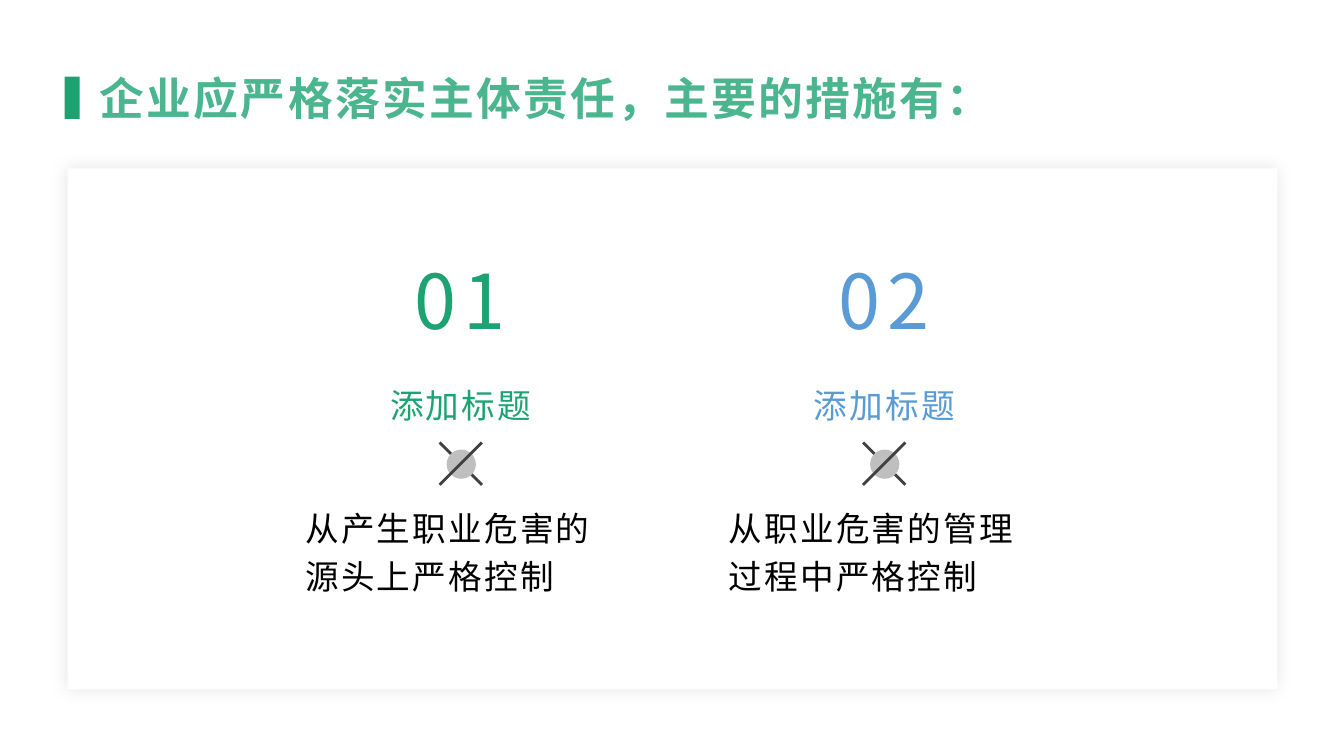
from lxml import etree
from pptx import Presentation
from pptx import util as u
from pptx.dml.color import RGBColor
from pptx.enum import shapes, text
from pptx.oxml import ns

Inches = u.Inches


def tint(code):
    return RGBColor.from_string(code)


def node(parent, tag, **attrs):
    return etree.SubElement(parent, ns.qn(tag), attrs)


class Deck:
    """Holds the style and the current slide, and draws each kind of element."""

    font = "Noto Sans CJK SC"
    green, blue, title = "1DA272", "5B9BD5", "4AB58E"
    black, dark, gray, white = "000000", "404040", "BFBFBF", "FFFFFF"

    def __init__(self):
        self.prs = Presentation()
        self.prs.slide_width = Inches(13.33)
        self.prs.slide_height = Inches(7.5)
        self.slide = self.prs.slides.add_slide(self.prs.slide_layouts[6])

    def shape(self, kind, box, fill):
        item = self.slide.shapes.add_shape(kind, *map(Inches, box))
        item.shadow.inherit = False
        item.fill.solid()
        item.fill.fore_color.rgb = tint(fill)
        item.line.fill.background()
        return item

    def card(self, box):
        item = self.shape(shapes.MSO_SHAPE.RECTANGLE, box, self.white)
        glow = node(item.element.spPr.find(ns.qn("a:effectLst")), "a:outerShdw",
                    blurRad=str(u.Pt(12)), dist="0", dir="0", algn="ctr",
                    rotWithShape="0")
        node(node(glow, "a:srgbClr", val=self.black), "a:alpha", val="10000")

    def line(self, *ends):
        item = self.slide.shapes.add_connector(
            shapes.MSO_CONNECTOR.STRAIGHT, *map(Inches, ends))
        item.line.color.rgb = tint(self.dark)
        item.line.width = u.Pt(2)
        node(item.element.spPr, "a:effectLst")

    def text(self, box, words, size, color, gap=1.6, bold=False, align=None,
             after=0, lead=None, anchor=text.MSO_ANCHOR.TOP,
             pads=(0.1, 0.05, 0.1, 0.05)):
        frame = self.slide.shapes.add_textbox(*map(Inches, box)).text_frame
        frame.word_wrap = True
        frame.vertical_anchor = anchor
        (frame.margin_left, frame.margin_top,
         frame.margin_right, frame.margin_bottom) = map(Inches, pads)
        para = frame.paragraphs[0]
        para.alignment = align
        para.space_after = u.Pt(after)
        para.line_spacing = lead
        run = para.add_run()
        run.text = words
        run.font.name = self.font
        run.font.size = u.Pt(size)
        run.font.bold = bold
        run.font.color.rgb = tint(color)
        props = run.font._element
        props.set("spc", str(round(gap * 100)))
        node(props, "a:ea", typeface=self.font)

    def mark(self, mid, top):
        left, right, low = mid - 0.21, mid + 0.21, top + 0.42
        self.line(left, top, right, low)
        dot = self.shape(shapes.MSO_SHAPE.ROUNDED_RECTANGLE,
                         (mid - 0.14, top + 0.07, 0.29, 0.29), self.gray)
        dot.adjustments[0] = 0.5
        self.line(right, top, left, low)

    def column(self, mid, number, head, body, color):
        center = text.PP_ALIGN.CENTER
        self.mark(mid, 4.39)
        self.text((mid - 1.64, 4.91, 3.27, 1.25), body, 24, self.black,
                  after=8, lead=1.2)
        self.text((mid - 0.7, 2.34, 1.39, 1.33), number, 54, color, gap=4.8,
                  align=center, after=8, anchor=text.MSO_ANCHOR.MIDDLE,
                  pads=(0.1, 0.05, 0.1, 0.12))
        self.text((mid - 1.73, 3.77, 3.46, 0.52), head, 24, color, align=center)


def main():
    deck = Deck()
    deck.card((0.67, 1.67, 12, 5.17))
    deck.text((0.92, 0.67, 11.17, 0.67), "企业应严格落实主体责任，主要的措施有：",
              32, deck.title, bold=True, pads=(0.07, 0.03, 0.07, 0.03))
    parts = [("01", "从产生职业危害的源头上严格控制", deck.green),
             ("02", "从职业危害的管理过程中严格控制", deck.blue)]
    for i, (number, body, color) in enumerate(parts):
        deck.column(4.57 + 4.2 * i, number, "添加标题", body, color)
    deck.shape(shapes.MSO_SHAPE.RECTANGLE, (0.64, 0.76, 0.15, 0.42), deck.green)
    deck.prs.save("out.pptx")


if __name__ == "__main__":
    main()
